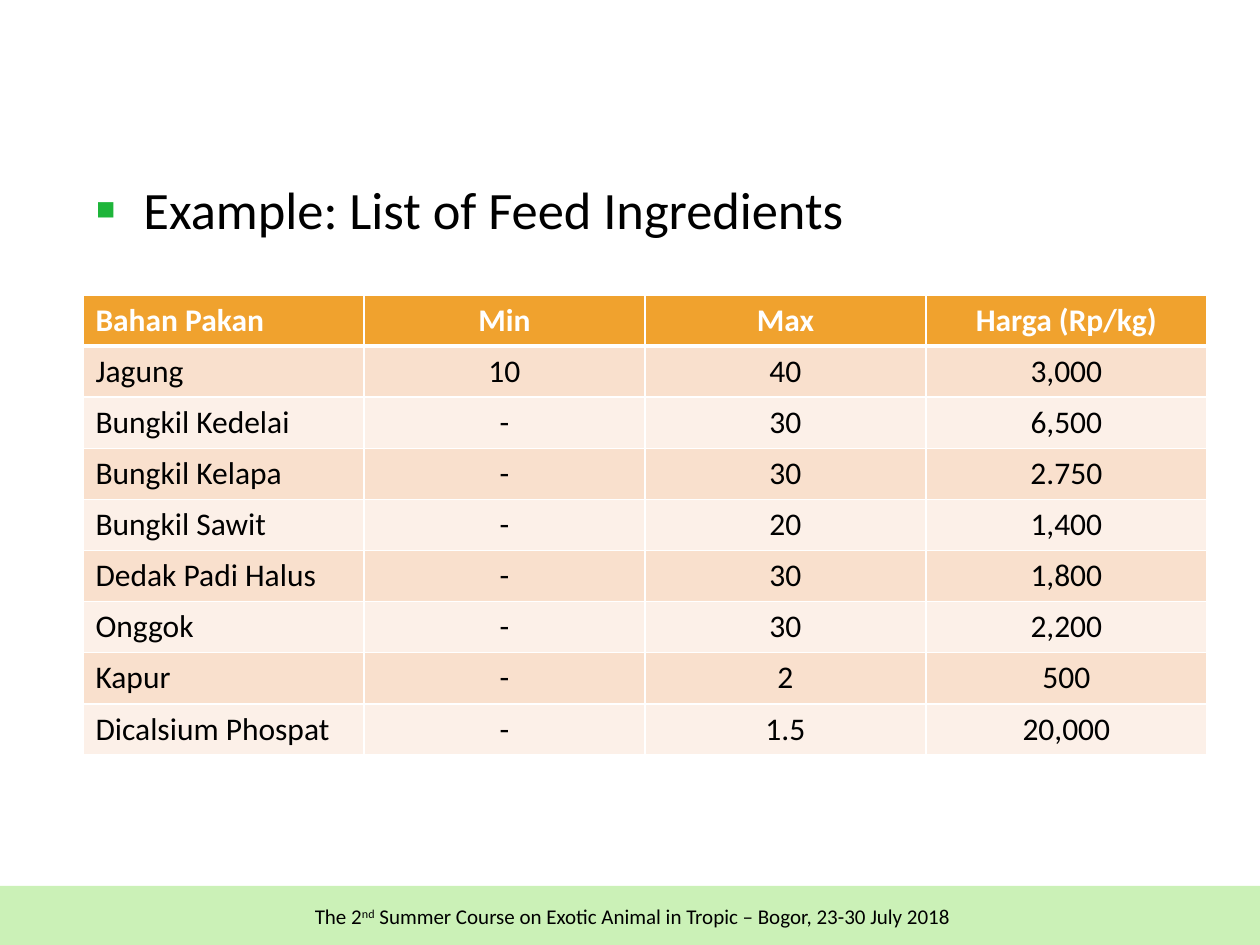
"""Build the feed ingredients slide with its price table and course footer."""
from lxml import etree
from pptx import Presentation
from pptx import util as u
from pptx.dml.color import RGBColor
from pptx.enum import shapes, text
from pptx.oxml import ns

PX = u.Inches(1) / 126
BLACK = RGBColor(0x00, 0x00, 0x00)
WHITE = RGBColor(0xFF, 0xFF, 0xFF)
ORANGE = RGBColor(0xF0, 0xA2, 0x2E)
PEACH = RGBColor(0xF9, 0xE0, 0xCD)
CREAM = RGBColor(0xFC, 0xF0, 0xE8)
MINT = RGBColor(0xCB, 0xF1, 0xB7)
GREEN = RGBColor(0x1E, 0xB5, 0x3A)

ROWS = [
    ("Bahan Pakan", "Min", "Max", "Harga (Rp/kg)"),
    ("Jagung", "10", "40", "3,000"),
    ("Bungkil Kedelai", "-", "30", "6,500"),
    ("Bungkil Kelapa", "-", "30", "2.750"),
    ("Bungkil Sawit", "-", "20", "1,400"),
    ("Dedak Padi Halus", "-", "30", "1,800"),
    ("Onggok", "-", "30", "2,200"),
    ("Kapur", "-", "2", "500"),
    ("Dicalsium Phospat", "-", "1.5", "20,000"),
]


def box(*lengths):
    return [u.Emu(round(n * PX)) for n in lengths]


def add_run(p, words, size, color, bold=False):
    r = p.add_run()
    r.text = words
    for name, value in {"name": "Calibri", "size": u.Pt(size), "bold": bold}.items():
        setattr(r.font, name, value)
    r.font.color.rgb = color
    return r


prs = Presentation()
prs.slide_width, prs.slide_height = box(1260, 945)
s = prs.slides.add_slide(prs.slide_layouts[5])

footer = s.shapes.add_shape(shapes.MSO_SHAPE.RECTANGLE, *box(-1, 886, 1261, 63))
footer.shadow.inherit = False
footer.fill.solid()
footer.fill.fore_color.rgb = MINT
footer.line.fill.background()
footer.text_frame.vertical_anchor = text.MSO_ANCHOR.MIDDLE
p = footer.text_frame.paragraphs[0]
p.alignment = text.PP_ALIGN.CENTER
p.line_spacing = 0.9
p._p.get_or_add_pPr().set("marL", str(u.Inches(0.05)))
add_run(p, "The 2", 12, BLACK)
add_run(p, "nd", 12, BLACK)._r.get_or_add_rPr().set("baseline", "30000")
add_run(p, " Summer Course on Exotic Animal in Tropic – Bogor, 23-30 July 2018", 12, BLACK)

frame = s.shapes.add_table(len(ROWS), len(ROWS[0]), *box(83, 295, 1124, 459))
for i, row in enumerate(ROWS):
    header = i == 0
    fill = ORANGE if header else PEACH if i % 2 else CREAM
    for j, words in enumerate(row):
        cell = frame.table.cell(i, j)
        cell.fill.solid()
        cell.fill.fore_color.rgb = fill
        p = cell.text_frame.paragraphs[0]
        p.alignment = text.PP_ALIGN.CENTER if j else text.PP_ALIGN.LEFT
        add_run(p, words, 18, WHITE if header else BLACK, header)
        widths = {"lnL": 1, "lnR": 1, "lnT": 3 if i == 1 else 1, "lnB": 3 if header else 1}
        for k, (side, width) in enumerate(widths.items()):
            ln = etree.Element(ns.qn("a:" + side), w=str(u.Pt(width)))
            solid = etree.SubElement(ln, ns.qn("a:solidFill"))
            etree.SubElement(solid, ns.qn("a:srgbClr"), val=str(WHITE))
            cell._tc.get_or_add_tcPr().insert(k, ln)

title = s.shapes.title
title.left, title.top, title.width, title.height = box(83, 171, 1124, 678)
tf = title.text_frame
for name, value in {"word_wrap": True, "auto_size": text.MSO_AUTO_SIZE.NONE,
                    "vertical_anchor": text.MSO_ANCHOR.TOP}.items():
    setattr(tf, name, value)
p = tf.paragraphs[0]
p.alignment = text.PP_ALIGN.LEFT
p.space_before = u.Pt(3)
add_run(p, "Example: List of Feed Ingredients", 30, BLACK)
pPr = p._p.get_or_add_pPr()
pPr.set("marL", str(u.Inches(0.38)))
pPr.set("indent", str(u.Inches(-0.38)))
color = etree.SubElement(pPr, ns.qn("a:buClr"))
etree.SubElement(color, ns.qn("a:srgbClr"), val=str(GREEN))
etree.SubElement(pPr, ns.qn("a:buSzPct"), val="115000")
etree.SubElement(pPr, ns.qn("a:buFont"), typeface="Calibri")
etree.SubElement(pPr, ns.qn("a:buChar"), char="▪")

prs.save("out.pptx")
